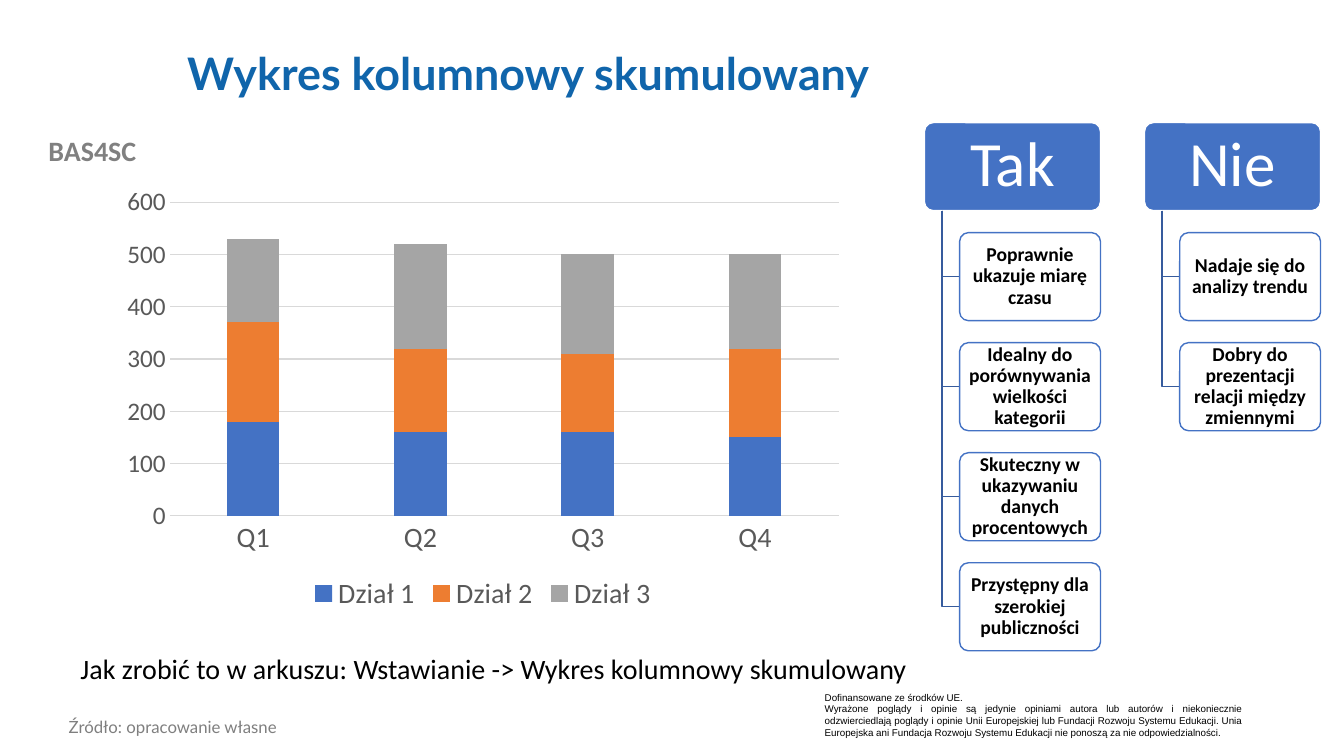
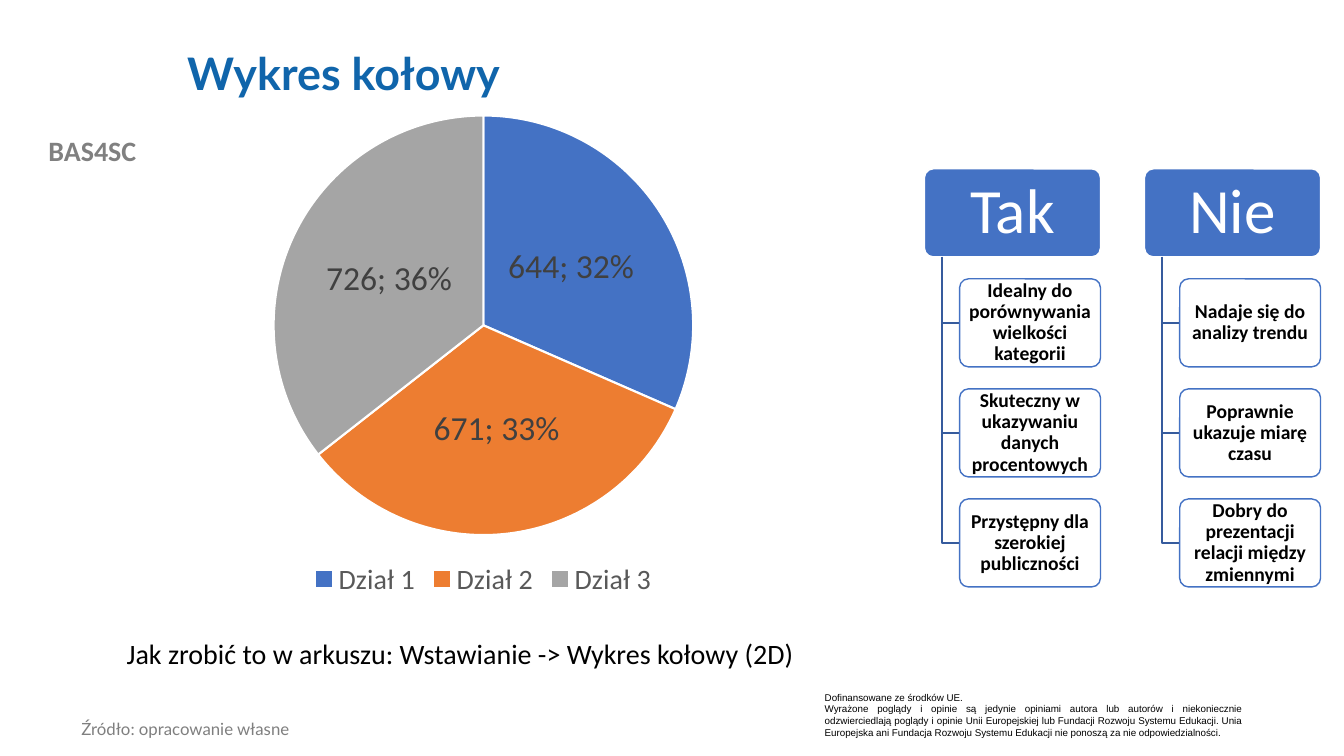
from lxml.etree import Element
from pptx import Presentation
from pptx.chart.data import CategoryChartData
from pptx.dml.color import RGBColor
from pptx.enum.chart import (XL_CHART_TYPE, XL_LABEL_POSITION,
                             XL_LEGEND_POSITION, XL_TICK_MARK)
from pptx.enum.shapes import MSO_SHAPE
from pptx.enum.text import MSO_ANCHOR, PP_ALIGN
from pptx.oxml.ns import qn
from pptx.util import Inches, Pt

COLUMNS, ROWS = 160, 90
UNIT = Inches(7.5) // ROWS

BLUE, ORANGE, GRAY = "4472C4", "ED7D31", "A5A5A5"
SERIES_COLORS = [BLUE, ORANGE, GRAY]
TITLE_BLUE, ELBOW_BLUE = "1065AB", "365B9D"
BLACK, WHITE = "000000", "FFFFFF"
HEADER_GRAY, SOURCE_GRAY, GRID_GRAY = "808080", "7F7F7F", "D9D9D9"
CHART_TEXT, LABEL_TEXT = "595959", "404040"

DISCLAIMER = [
    "Dofinansowane ze środków UE.",
    "Wyrażone poglądy i opinie są jedynie opiniami autora lub autorów i "
    "niekoniecznie odzwierciedlają poglądy i opinie Unii Europejskiej lub "
    "Fundacji Rozwoju Systemu Edukacji. Unia Europejska ani Fundacja Rozwoju "
    "Systemu Edukacji nie ponoszą za nie odpowiedzialności.",
]
DEPARTMENTS = ["Dział 1", "Dział 2", "Dział 3"]
TIME = "Poprawnie ukazuje miarę czasu"
COMPARE = "Idealny do porównywania wielkości kategorii"
PERCENT = "Skuteczny w ukazywaniu danych procentowych"
PUBLIC = "Przystępny dla szerokiej publiczności"
TREND = "Nadaje się do analizy trendu"
RELATIONS = "Dobry do prezentacji relacji między zmiennymi"


def rgb(color):
    return RGBColor.from_string(color)


def units(*lengths):
    """Turn grid columns and rows into EMU."""
    return [round(length * UNIT) for length in lengths]


def set_font(font, size, color, name="Calibri", bold=False):
    font.name, font.size, font.bold = name, Pt(size), bold
    font.color.rgb = rgb(color)


def set_line(line, color, width):
    line.color.rgb = rgb(color)
    line.width = Pt(width)


def set_fill(fill, color):
    fill.solid()
    fill.fore_color.rgb = rgb(color)


class Deck:
    """The shared style and the slide being built, on a 160 by 90 grid."""

    node_height = 10.48
    tree_left = 110.05

    def __init__(self):
        self.prs = Presentation()
        self.prs.slide_width, self.prs.slide_height = units(COLUMNS, ROWS)
        self.slide = None

    def add_slide(self, title):
        self.slide = self.prs.slides.add_slide(self.prs.slide_layouts[6])
        self.text((0, 15.36, 22, 5.3), ["BAS4SC"], 20, HEADER_GRAY,
                  bold=True, align=PP_ALIGN.CENTER)
        self.text((97, 81.7, 52, 6.8), DISCLAIMER, 7, BLACK, name="Arial",
                  align=PP_ALIGN.JUSTIFY)
        self.text((21.1, 4.8, 128, 8.4), [title], 32, TITLE_BLUE, name="Lato",
                  bold=True, spacing=0.9, anchor=MSO_ANCHOR.MIDDLE)

    def text(self, box, lines, size, color, name="Calibri", bold=False,
             align=PP_ALIGN.LEFT, spacing=1.0, anchor=MSO_ANCHOR.TOP):
        tf = self.slide.shapes.add_textbox(*units(*box)).text_frame
        tf.word_wrap = True
        tf.vertical_anchor = anchor
        tf.text = "\n".join(lines)
        for p in tf.paragraphs:
            p.alignment, p.line_spacing = align, spacing
            set_font(p.font, size, color, name, bold)

    def how_to(self, left, top, width, menu):
        self.text((left, top, width, 5.3),
                  [f"Jak zrobić to w arkuszu: Wstawianie -> {menu}"], 20, BLACK)

    def source(self, left, top):
        self.text((left, top, 60, 3.6), ["Źródło: opracowanie własne"], 12,
                  SOURCE_GRAY, name="Lato", spacing=0.9)

    def node(self, box, label, size, color, fill, line, margins, bold=False):
        sp = self.slide.shapes.add_shape(MSO_SHAPE.ROUNDED_RECTANGLE, *units(*box))
        sp.adjustments[0] = 0.1
        sp.shadow.inherit = False
        set_fill(sp.fill, fill)
        set_line(sp.line, line, 1)
        tf = sp.text_frame
        tf.word_wrap = True
        tf.vertical_anchor = MSO_ANCHOR.MIDDLE
        tf.margin_left = tf.margin_right = Inches(margins[0])
        tf.margin_top = tf.margin_bottom = Inches(margins[1])
        p = tf.paragraphs[0]
        p.text, p.alignment, p.line_spacing = label, PP_ALIGN.CENTER, 0.9
        set_font(p.font, size, color, bold=bold)

    def elbow(self, left, top, right, bottom):
        x1, y1, x2, y2 = units(left, top, right, bottom)
        builder = self.slide.shapes.build_freeform(x1, y1)
        builder.add_line_segments([(x1, y2), (x2, y2)], close=False)
        sp = builder.convert_to_shape()
        sp.shadow.inherit = False
        sp.fill.background()
        set_line(sp.line, ELBOW_BLUE, 1)

    def trees(self, top, branches):
        """Draw one header per branch with its boxes hung below it."""
        h = self.node_height
        for column, (header, details) in enumerate(branches.items()):
            left = self.tree_left + column * 2.5 * h
            self.node((left, top, 2 * h, h), header, 45, WHITE, BLUE, WHITE,
                      (0.09, 0.06))
            for row, detail in enumerate(details, 1):
                y = top + row * 1.25 * h
                self.elbow(left + 0.2 * h, top + h, left + 0.4 * h, y + h / 2)
                self.node((left + 0.4 * h, y, 1.6 * h, h), detail, 14, BLACK,
                          WHITE, BLUE, (0.03, 0.02), bold=True)

    def chart(self, kind, box, categories, series):
        data = CategoryChartData()
        data.categories = categories
        for name, values in series.items():
            data.add_series(name, values)
        chart = self.slide.shapes.add_chart(kind, *units(*box), data).chart
        set_font(chart.font, 10, BLACK)
        chart.has_title = False
        chart.has_legend = True
        chart.legend.position = XL_LEGEND_POSITION.BOTTOM
        chart.legend.include_in_layout = False
        set_font(chart.legend.font, 20, CHART_TEXT)
        return chart

    def stacked_columns(self, box, categories, series):
        chart = self.chart(XL_CHART_TYPE.COLUMN_STACKED, box, categories, series)
        plot = chart.plots[0]
        plot.gap_width, plot.overlap = 219, 100
        plot.vary_by_categories = False
        for ser, color in zip(plot.series, SERIES_COLORS):
            set_fill(ser.format.fill, color)
        for axis, size in ((chart.category_axis, 20), (chart.value_axis, 18)):
            axis.major_tick_mark = axis.minor_tick_mark = XL_TICK_MARK.NONE
            set_font(axis.tick_labels.font, size, CHART_TEXT)
        set_line(chart.category_axis.format.line, GRID_GRAY, 0.75)
        axis = chart.value_axis
        axis.minimum_scale, axis.maximum_scale, axis.major_unit = 0, 600, 100
        axis.format.line.fill.background()
        set_line(axis.major_gridlines.format.line, GRID_GRAY, 0.75)

    def pie(self, box, categories, values):
        chart = self.chart(XL_CHART_TYPE.PIE, box, categories,
                           {"Series 1": values})
        plot = chart.plots[0]
        plot.vary_by_categories = True
        ser = plot.series[0]
        for i, color in enumerate(SERIES_COLORS):
            point = ser.points[i].format
            set_fill(point.fill, color)
            set_line(point.line, WHITE, 1.5)
        labels = ser.data_labels
        labels.show_value = labels.show_percentage = True
        labels.position = XL_LABEL_POSITION.CENTER
        set_font(labels.font, 24, LABEL_TEXT)
        separator = Element(qn("c:separator"))
        separator.text = "; "
        dlbls = ser.format._element.find(qn("c:dLbls"))
        dlbls.find(qn("c:showBubbleSize")).addnext(separator)


def main():
    deck = Deck()

    deck.add_slide("Wykres kolumnowy skumulowany")
    deck.source(7, 85)
    deck.trees(14.6, {"Tak": [TIME, COMPARE, PERCENT, PUBLIC],
                      "Nie": [TREND, RELATIONS]})
    deck.how_to(8.4, 77, 105.6, "Wykres kolumnowy skumulowany")
    quarters = [(180, 160, 160, 150), (190, 160, 150, 170), (160, 200, 190, 180)]
    deck.stacked_columns((13.4, 21.2, 88.2, 52.2), ["Q1", "Q2", "Q3", "Q4"],
                         dict(zip(DEPARTMENTS, quarters)))

    deck.add_slide("Wykres kołowy")
    deck.source(8.5, 85.2)
    deck.trees(20.1, {"Tak": [COMPARE, PERCENT, PUBLIC],
                      "Nie": [TREND, TIME, RELATIONS]})
    deck.how_to(13.9, 75.2, 94.6, "Wykres kołowy (2D)")
    deck.pie((23.3, 12.1, 68.5, 59.6), DEPARTMENTS, (644, 671, 726))

    deck.prs.save("out.pptx")


if __name__ == "__main__":
    main()
